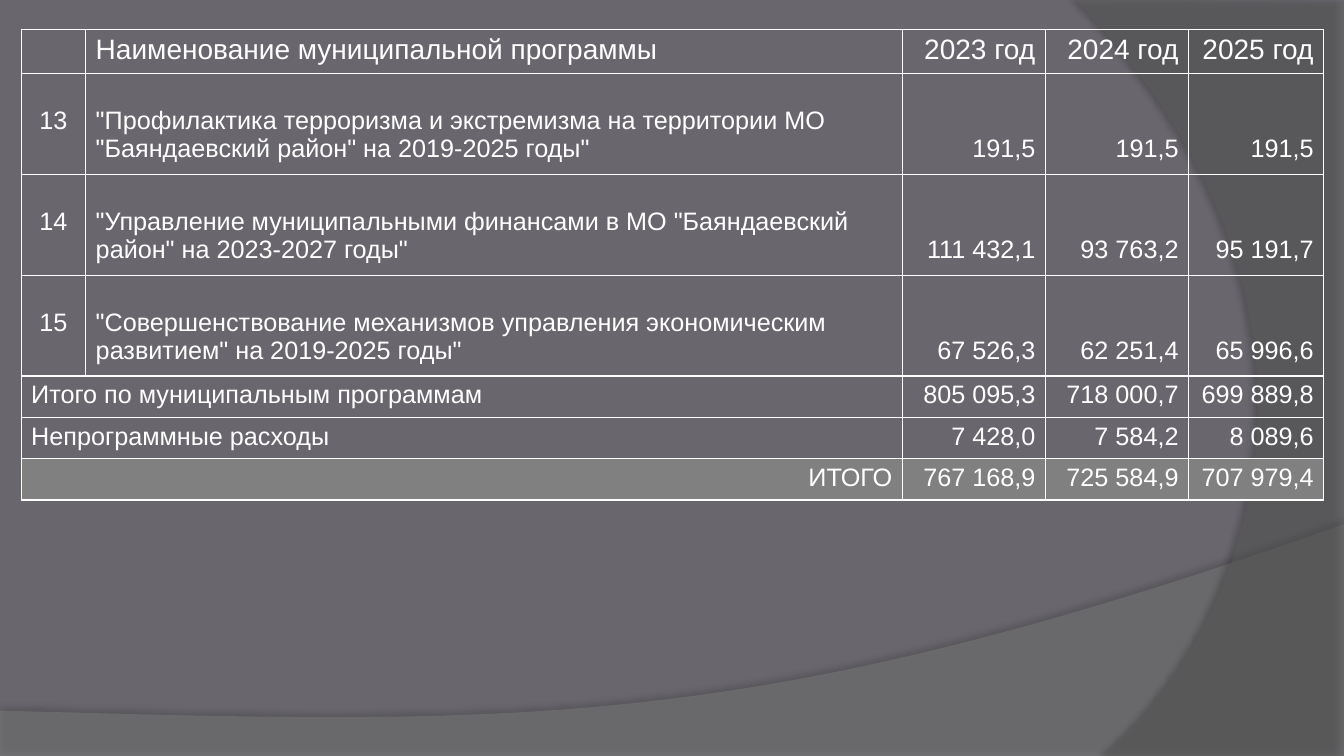
from lxml.etree import SubElement
from pptx import Presentation
from pptx.dml.color import RGBColor
from pptx.enum.text import PP_ALIGN
from pptx.oxml.ns import qn
from pptx.util import Inches, Pt

BACKGROUND = RGBColor(0x69, 0x67, 0x6D)
WAVE = RGBColor(0x7F, 0x7F, 0x7F)
ARC = RGBColor(0x5E, 0x5E, 0x5E)
TOTAL_FILL = RGBColor(0x80, 0x80, 0x80)
WHITE = RGBColor(0xFF, 0xFF, 0xFF)
BLACK = RGBColor(0, 0, 0)

HEADER = ["", "Наименование муниципальной программы", "2023 год", "2024 год", "2025 год"]
PROGRAMS = [
    ["13", '"Профилактика терроризма и экстремизма на территории МО "Баяндаевский район" на 2019-2025 годы"',
     "191,5", "191,5", "191,5"],
    ["14", '"Управление муниципальными финансами в МО "Баяндаевский район" на 2023-2027 годы"',
     "111 432,1", "93 763,2", "95 191,7"],
    ["15", '"Совершенствование механизмов управления экономическим развитием" на 2019-2025 годы"',
     "67 526,3", "62 251,4", "65 996,6"],
]
SUMMARY = [
    ["Итого по муниципальным программам", "", "805 095,3", "718 000,7", "699 889,8"],
    ["Непрограммные расходы", "", "7 428,0", "7 584,2", "8 089,6"],
    ["ИТОГО", "", "767 168,9", "725 584,9", "707 979,4"],
]
COLUMN_WIDTHS = [0.64, 8.1, 1.42, 1.42, 1.34]
ROW_HEIGHTS = [0.44] + [1.0] * len(PROGRAMS) + [0.41] * len(SUMMARY)
COLUMN_ALIGNS = [PP_ALIGN.CENTER, PP_ALIGN.LEFT] + [PP_ALIGN.RIGHT] * 3
CELL_MARGIN = 0.05
TEXT_LINE = 0.28


def bezier(start, control1, control2, end, steps=60):
    curve = []
    for step in range(steps + 1):
        t = step / steps
        weights = ((1 - t) ** 3, 3 * t * (1 - t) ** 2, 3 * t ** 2 * (1 - t), t ** 3)
        curve.append(tuple(sum(w * p[axis] for w, p in zip(weights, (start, control1, control2, end)))
                           for axis in (0, 1)))
    return curve


def add_color(parent, color, opacity):
    tint = SubElement(parent, qn("a:srgbClr"), val=str(color))
    SubElement(tint, qn("a:alpha"), val=str(opacity * 1000))


def add_swoosh(slide, points, color, opacity, shadow_opacity, blur, distance, direction):
    outline = [(Inches(x), Inches(y)) for x, y in points]
    builder = slide.shapes.build_freeform(*outline[0])
    builder.add_line_segments(outline[1:], close=True)
    swoosh = builder.convert_to_shape()
    swoosh.fill.solid()
    swoosh.fill.fore_color.rgb = color
    tint = swoosh.fill._xPr.find(qn("a:solidFill")).find(qn("a:srgbClr"))
    SubElement(tint, qn("a:alpha"), val=str(opacity * 1000))
    swoosh.line.fill.background()
    swoosh.shadow.inherit = False
    effects = swoosh._element.spPr.find(qn("a:effectLst"))
    shadow = SubElement(effects, qn("a:outerShdw"), blurRad=str(Pt(blur)), dist=str(Pt(distance)),
                        dir=str(direction * 60000), algn="ctr", rotWithShape="0")
    add_color(shadow, BLACK, shadow_opacity)


def add_borders(cell):
    properties = cell._tc.get_or_add_tcPr()
    for side in ("lnL", "lnR", "lnT", "lnB"):
        border = SubElement(properties, qn(f"a:{side}"), w=str(Pt(1)))
        fill = SubElement(border, qn("a:solidFill"))
        SubElement(fill, qn("a:srgbClr"), val=str(WHITE))


def fill_cell(cell, text, size, align, skipped_lines=0, fill=None):
    add_borders(cell)
    if fill is None:
        cell.fill.background()
    else:
        cell.fill.solid()
        cell.fill.fore_color.rgb = fill
    cell.margin_top = Inches(CELL_MARGIN + skipped_lines * TEXT_LINE)
    cell.margin_bottom = Inches(CELL_MARGIN)
    cell.text_frame.text = text
    paragraph = cell.text_frame.paragraphs[0]
    paragraph.alignment = align
    for font in [paragraph.font] + [run.font for run in paragraph.runs]:
        font.name = "Arial"
        font.size = Pt(size)
        font.color.rgb = WHITE


def add_budget_table(slide):
    rows = [HEADER] + PROGRAMS + SUMMARY
    table = slide.shapes.add_table(len(rows), len(HEADER), Inches(0.21), Inches(0.29),
                                   Inches(sum(COLUMN_WIDTHS)), Inches(sum(ROW_HEIGHTS))).table
    table.first_row = table.horz_banding = False
    for column, width in zip(table.columns, COLUMN_WIDTHS):
        column.width = Inches(width)
    for row, height in zip(table.rows, ROW_HEIGHTS):
        row.height = Inches(height)
    for r, texts in enumerate(rows):
        is_program = texts in PROGRAMS
        is_summary = texts in SUMMARY
        is_total = texts is SUMMARY[-1]
        if is_summary:
            table.cell(r, 0).merge(table.cell(r, 1))
        for c, text in enumerate(texts):
            align = COLUMN_ALIGNS[c]
            if is_summary and c == 0:
                align = PP_ALIGN.RIGHT if is_total else PP_ALIGN.LEFT
            skipped_lines = (1 if c < 2 else 2) if is_program else 0
            fill_cell(table.cell(r, c), text, 20 if r == 0 else 18, align, skipped_lines,
                      TOTAL_FILL if is_total else None)


def main():
    presentation = Presentation()
    presentation.slide_width = Inches(13.33)
    presentation.slide_height = Inches(7.5)
    slide = presentation.slides.add_slide(presentation.slide_layouts[6])
    slide.background.fill.solid()
    slide.background.fill.fore_color.rgb = BACKGROUND
    wave = [(0, 7.51), (13.33, 7.51)] + bezier((13.33, 5.2), (7.45, 7.29), (5.21, 7.19), (0, 7.05))
    arc = [(13.33, 0.02), (13.33, 7.5)] + bezier((10.95, 7.5), (12.46, 6.19), (13.57, 3), (10.67, 0))
    add_swoosh(slide, wave, WAVE, 45, 35, 4, 3.5, 270)
    add_swoosh(slide, arc, ARC, 40, 45, 4, 4, 180)
    add_budget_table(slide)
    presentation.save("out.pptx")


if __name__ == "__main__":
    main()
